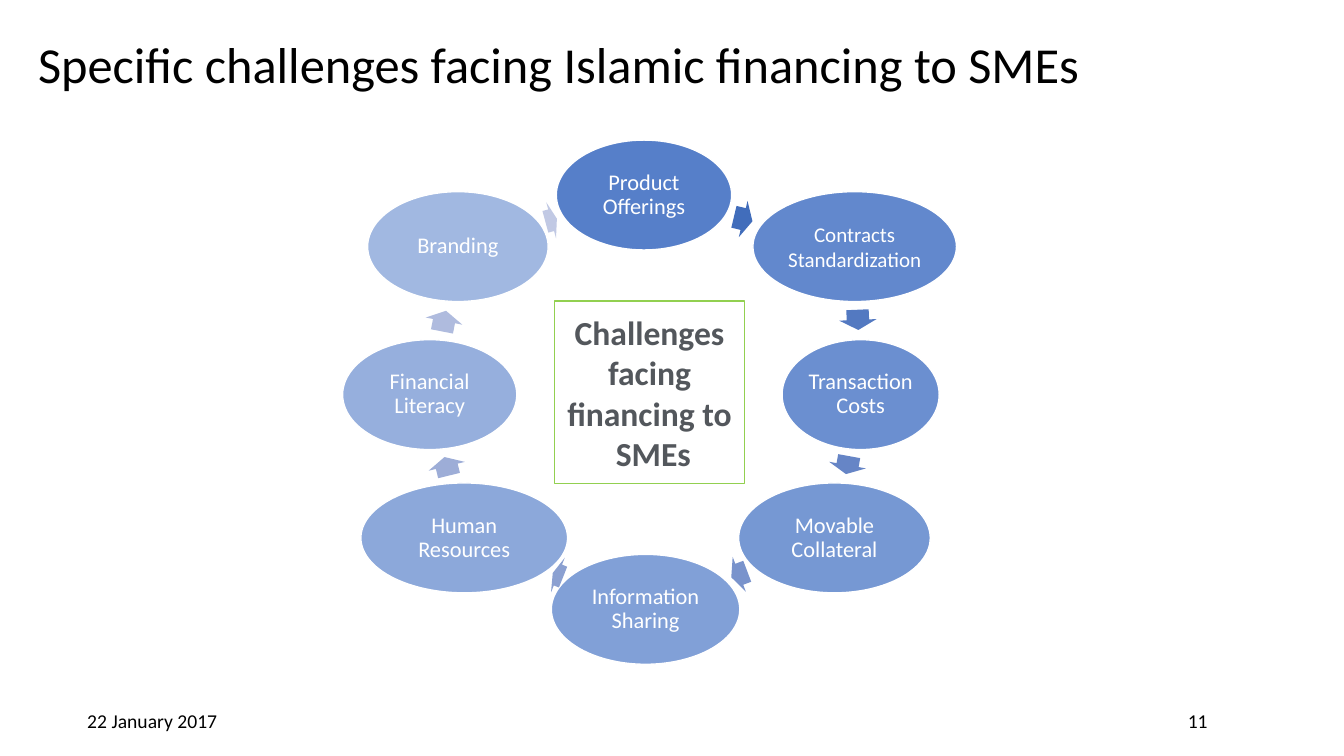
from pptx import Presentation
from pptx.dml.color import RGBColor
from pptx.enum.shapes import MSO_SHAPE
from pptx.enum.text import MSO_ANCHOR, PP_ALIGN
from pptx.oxml.ns import qn
from pptx.util import Cm, Pt
from lxml import etree

OVAL, ARROW, RECT = MSO_SHAPE.OVAL, MSO_SHAPE.RIGHT_ARROW, MSO_SHAPE.RECTANGLE
LEFT, CENTER = PP_ALIGN.LEFT, PP_ALIGN.CENTER
MIDDLE = MSO_ANCHOR.MIDDLE

BLACK = RGBColor(0x00, 0x00, 0x00)
WHITE = RGBColor(0xFF, 0xFF, 0xFF)
BLUE = RGBColor(0x44, 0x72, 0xC4)
GREEN = RGBColor(0x92, 0xD0, 0x50)
GREY = RGBColor(0x53, 0x57, 0x5C)
SHADES = [
    RGBColor(0x41, 0x6D, 0xBB), RGBColor(0x53, 0x79, 0xC1),
    RGBColor(0x66, 0x85, 0xC6), RGBColor(0x79, 0x93, 0xCC),
    RGBColor(0x8B, 0xA0, 0xD1), RGBColor(0x9D, 0xAD, 0xD7),
    RGBColor(0xAF, 0xBB, 0xDE), RGBColor(0xC1, 0xC9, 0xE4),
]

TOPICS = [
    (["Product Offerings"], 16, 0.9, 16.23, 3.53, 4.42),
    (["Contracts", "Standardization"], 15, 1, 21.54, 4.83, 5.13),
    (["Transaction Costs"], 16, 0.9, 21.69, 8.56, 3.96),
    (["Movable Collateral"], 16, 0.9, 21.03, 12.17, 4.83),
    (["Information Sharing"], 16, 0.9, 16.27, 13.97, 4.75),
    (["Human Resources"], 16, 0.9, 11.7, 12.17, 5.21),
    (["Financial Literacy"], 16, 0.9, 10.83, 8.56, 4.39),
    (["Branding"], 16, 0.9, 11.54, 4.83, 4.55),
]
ARROWS = [
    (18.73, 5.52, 0.48, 13.5), (21.62, 8.06, 0.51, 87.6),
    (21.36, 11.72, 0.46, 100.2), (18.63, 14.47, 0.43, 159.3),
    (14.06, 14.49, 0.28, 201.7), (11.26, 11.75, 0.48, 256.3),
    (11.19, 8.09, 0.53, 281.1), (13.89, 5.55, 0.3, 344.8),
]


class Board:
    """Hold the text style and the current slide."""

    def __init__(self, slide, font):
        self.slide, self.font = slide, font

    def label(self, shape, lines, size, color, align=CENTER, gap=1, bold=False):
        frame = shape.text_frame
        frame.word_wrap = True
        frame.vertical_anchor = MIDDLE
        for i, line in enumerate(lines):
            para = frame.add_paragraph() if i else frame.paragraphs[0]
            para.alignment = align
            para.line_spacing = float(gap)
            run = para.add_run()
            run.text = line
            run.font.name = self.font
            run.font.size = Pt(size)
            run.font.bold = bold
            run.font.color.rgb = color

    def text(self, line, x, y, w, h, size, align=CENTER, gap=1):
        box = self.slide.shapes.add_textbox(Cm(x), Cm(y), Cm(w), Cm(h))
        self.label(box, [line], size, BLACK, align, gap)

    def shape(self, kind, x, y, w, h, fill, line=None):
        item = self.slide.shapes.add_shape(kind, Cm(x), Cm(y), Cm(w), Cm(h))
        item.shadow.inherit = False
        item.fill.solid()
        item.fill.fore_color.rgb = fill
        if line is None:
            item.line.fill.background()
        else:
            item.line.color.rgb = line
            item.line.width = Pt(1)
        return item

    def oval(self, lines, size, gap, mid, y, w, alpha):
        item = self.shape(OVAL, mid - w / 2, y, w, 2.77, BLUE, WHITE)
        color = item.element.spPr.find(qn("a:solidFill"))[0]
        etree.SubElement(color, qn("a:alpha")).set("val", str(round(alpha * 1000)))
        frame = item.text_frame
        frame.margin_left = frame.margin_right = Cm(0.05)
        frame.margin_top = frame.margin_bottom = Cm(0.05)
        self.label(item, lines, size, WHITE, gap=gap)

    def arrow(self, x, y, w, turn, fill):
        h = 0.94
        item = self.shape(ARROW, x - w / 2, y - h / 2, w, h, fill)
        item.adjustments[0] = 0.6
        item.adjustments[1] = 0.5
        item.rotation = turn

    def panel(self, lines, x, y, w, h):
        item = self.shape(RECT, x, y, w, h, WHITE, GREEN)
        self.label(item, lines, 24, GREY, bold=True)


def main():
    deck = Presentation()
    deck.slide_width, deck.slide_height = Cm(33.87), Cm(19.05)
    board = Board(deck.slides.add_slide(deck.slide_layouts[6]), "Calibri")
    board.text("22 January 2017", 0.03, 17.65, 7.62, 1.02, 14)
    board.text("11", 26.54, 17.65, 7.29, 1.02, 14)
    board.text("Specific challenges facing Islamic financing to SMEs",
               0.71, 0.33, 30.51, 2.74, 36, LEFT, 0.9)
    step = 40 / (len(TOPICS) - 1)
    for i, (topic, arrow, shade) in enumerate(zip(TOPICS, ARROWS, SHADES)):
        board.oval(*topic, 90 - i * step)
        board.arrow(*arrow, shade)
    board.panel(["Challenges facing financing to", " SMEs"], 13.97, 7.59, 4.8, 4.6)
    deck.save("out.pptx")


if __name__ == "__main__":
    main()
